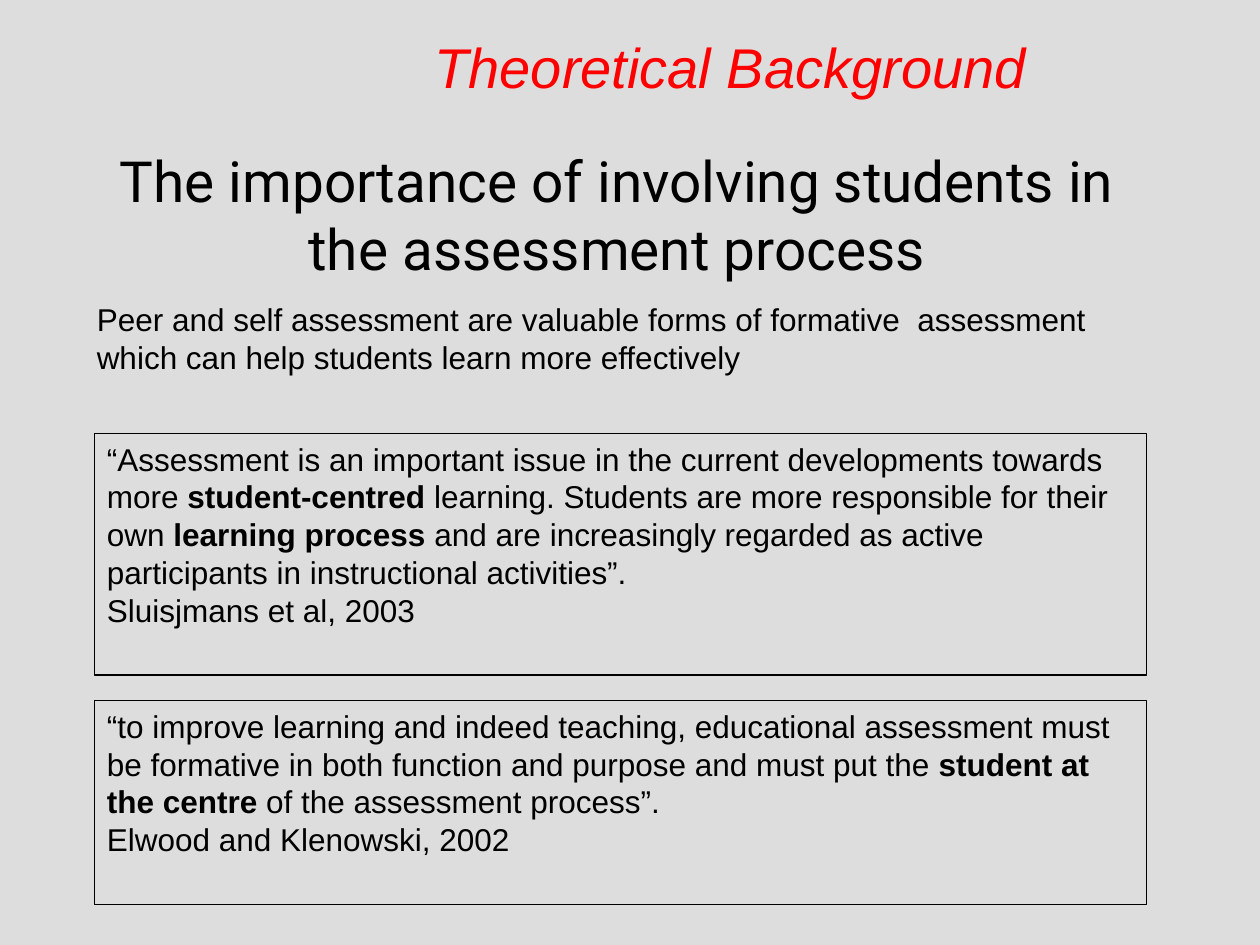
from dataclasses import dataclass

from pptx import Presentation
from pptx.dml.color import RGBColor
from pptx.enum.shapes import MSO_SHAPE
from pptx.enum.text import MSO_ANCHOR, PP_ALIGN
from pptx.slide import Slide
from pptx.text.text import TextFrame
from pptx.util import Inches, Pt

BLACK = "000000"
RED = "FF0000"
BACKGROUND = "DDDDDD"


@dataclass
class Span:
    """A piece of text with one weight."""
    text: str
    bold: bool = False


@dataclass
class Quote:
    """A framed quotation followed by its citation."""
    top: float
    height: float
    spans: list[Span]
    citation: str


QUOTES = [
    Quote(3.44, 1.92, [
        Span("“Assessment is an important issue in the current developments towards more "),
        Span("student-centred", bold=True),
        Span(" learning. Students are more responsible for their own "),
        Span("learning process ", bold=True),
        Span("and are increasingly regarded as active participants in instructional activities”."),
    ], "Sluisjmans et al, 2003"),
    Quote(5.56, 1.62, [
        Span("“to improve learning and indeed teaching, educational assessment must be "
             "formative in both function and purpose and must put the "),
        Span("student at the centre ", bold=True),
        Span("of the assessment process”."),
    ], "Elwood and Klenowski, 2002"),
]


def color(value: str) -> RGBColor:
    """Turn a hex string into a colour."""
    return RGBColor.from_string(value)


def write(frame: TextFrame, paragraphs: list[list[Span]], *, size: float = 18,
          font: str = "Arial", ink: str = BLACK, italic: bool = False,
          align: PP_ALIGN = PP_ALIGN.LEFT, anchor: MSO_ANCHOR = MSO_ANCHOR.TOP,
          wrap: bool = True) -> None:
    """Fill a text frame with formatted paragraphs."""
    frame.word_wrap = wrap
    frame.vertical_anchor = anchor
    for index, spans in enumerate(paragraphs):
        para = frame.add_paragraph() if index else frame.paragraphs[0]
        para.alignment = align
        for span in spans:
            run = para.add_run()
            run.text = span.text
            run.font.name = font
            run.font.size = Pt(size)
            run.font.bold = span.bold
            run.font.italic = italic
            run.font.color.rgb = color(ink)


def add_text(page: Slide, text: str, left: float, top: float, width: float,
             height: float, **style) -> None:
    """Place a plain text box."""
    box = page.shapes.add_textbox(Inches(left), Inches(top), Inches(width), Inches(height))
    write(box.text_frame, [[Span(text)]], **style)


def add_quote(page: Slide, quote: Quote) -> None:
    """Place a quotation in an outlined rectangle."""
    box = page.shapes.add_shape(MSO_SHAPE.RECTANGLE, Inches(0.75), Inches(quote.top),
                                Inches(8.35), Inches(quote.height))
    box.shadow.inherit = False
    box.fill.background()
    box.line.color.rgb = color(BLACK)
    box.line.width = Pt(1)
    write(box.text_frame, [quote.spans, [Span(quote.citation)]])


def main() -> None:
    """Build and save the slide."""
    deck = Presentation()
    deck.slide_width, deck.slide_height = Inches(10), Inches(7.5)
    page = deck.slides.add_slide(deck.slide_layouts[6])
    page.background.fill.solid()
    page.background.fill.fore_color.rgb = color(BACKGROUND)

    add_text(page, "The importance of involving students in the assessment process",
             0.67, 1.07, 8.45, 1.25, size=32.4, font="Roboto",
             align=PP_ALIGN.CENTER, anchor=MSO_ANCHOR.MIDDLE)
    for quote in QUOTES:
        add_quote(page, quote)
    add_text(page, "Peer and self assessment are valuable forms of formative  assessment  "
             "which can help students learn more effectively", 0.67, 2.33, 8.43, 0.71)
    add_text(page, "Theoretical Background", 3.35, 0.21, 4.93, 0.64,
             size=32, ink=RED, italic=True, wrap=False)
    deck.save("out.pptx")


if __name__ == "__main__":
    main()
